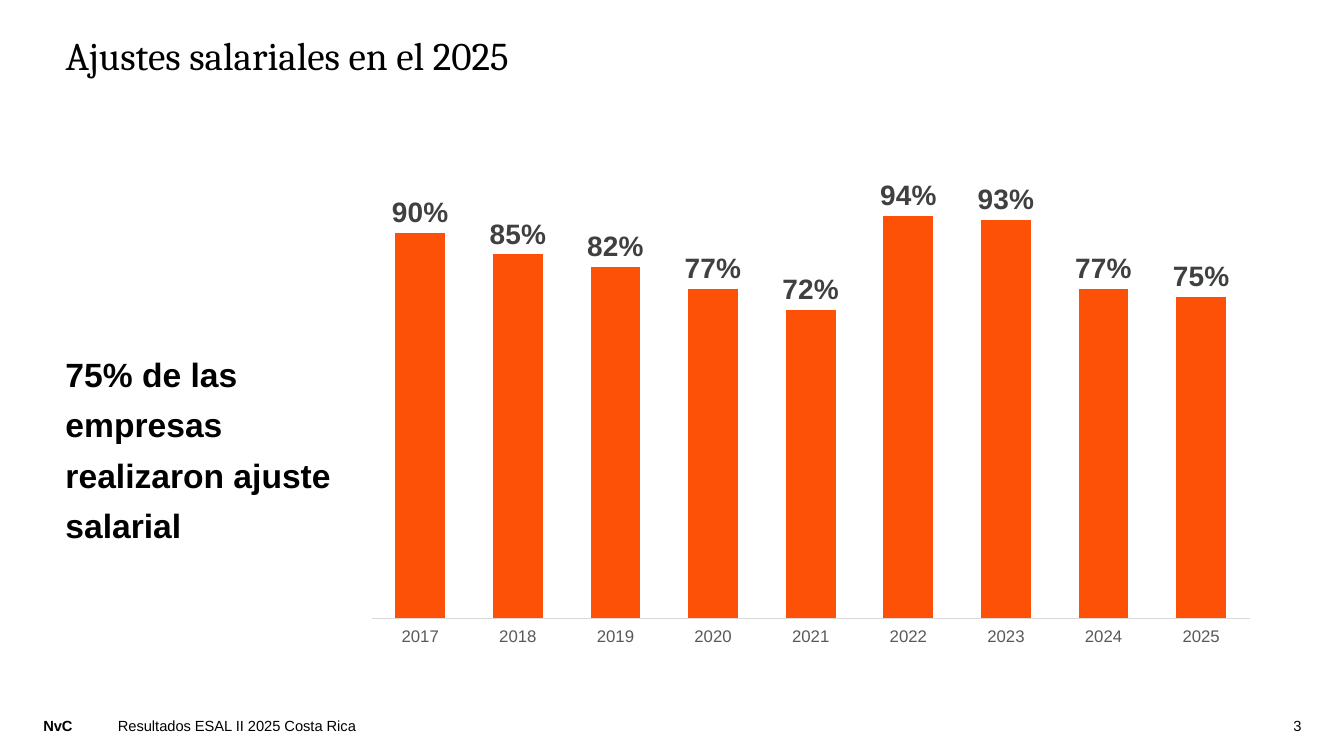
from lxml import etree
from pptx import Presentation
from pptx.chart.data import CategoryChartData
from pptx.dml.color import RGBColor
from pptx.enum.chart import XL_CHART_TYPE as ChartType
from pptx.enum.chart import XL_LABEL_POSITION as LabelPos
from pptx.enum.chart import XL_TICK_LABEL_POSITION as TickLabels
from pptx.enum.chart import XL_TICK_MARK as TickMark
from pptx.enum.text import MSO_ANCHOR as Anchor
from pptx.enum.text import MSO_AUTO_SIZE as AutoSize
from pptx.enum.text import PP_ALIGN as Align
from pptx.oxml.ns import qn
from pptx.util import Inches, Pt

BLACK = RGBColor(0x00, 0x00, 0x00)
ORANGE = RGBColor(0xFD, 0x51, 0x08)
LABEL_GRAY = RGBColor(0x40, 0x40, 0x40)
AXIS_GRAY = RGBColor(0x59, 0x59, 0x59)
LINE_GRAY = RGBColor(0xD9, 0xD9, 0xD9)

ADJUSTMENTS = {
    "2017": 0.90, "2018": 0.85, "2019": 0.82, "2020": 0.77, "2021": 0.72,
    "2022": 0.94, "2023": 0.93, "2024": 0.77, "2025": 0.75,
}


def set_font(font, size, color=BLACK, name="Arial", bold=False):
    font.color.rgb = color
    values = {"size": Pt(size), "name": name, "bold": bold}
    for attr, value in values.items():
        setattr(font, attr, value)


def fill_text(shape, text, size, anchor=Anchor.TOP, paragraph=None, **font):
    tf = shape.text_frame
    frame = {
        "margin_left": 0, "margin_right": 0, "margin_top": 0, "margin_bottom": 0,
        "word_wrap": True, "auto_size": AutoSize.NONE, "vertical_anchor": anchor,
    }
    for attr, value in frame.items():
        setattr(tf, attr, value)
    p = tf.paragraphs[0]
    for attr, value in {"alignment": Align.LEFT, **(paragraph or {})}.items():
        setattr(p, attr, value)
    r = p.add_run()
    r.text = text
    set_font(r.font, size, **font)


def add_title(s, text):
    title = s.shapes.title
    place = {"left": 0.65, "top": 0.36, "width": 12.47, "height": 1}
    for attr, value in place.items():
        setattr(title, attr, Inches(value))
    fill_text(title, text, 28, name="Cambria", paragraph={"line_spacing": 0.9})


def add_text(s, box, text, size, **options):
    sp = s.shapes.add_textbox(*map(Inches, box))
    fill_text(sp, text, size, **options)


def set_plot_area(chart, **area):
    plot_area = chart._chartSpace.find(".//" + qn("c:plotArea"))
    for old in plot_area.findall(qn("c:layout")):
        plot_area.remove(old)
    layout = etree.Element(qn("c:layout"))
    manual = etree.SubElement(layout, qn("c:manualLayout"))
    settings = {"layoutTarget": "inner", "xMode": "edge", "yMode": "edge", **area}
    for tag, value in settings.items():
        etree.SubElement(manual, qn("c:" + tag)).set("val", str(value))
    plot_area.insert(0, layout)


def add_column_chart(s, box, values):
    data = CategoryChartData(number_format="0%")
    data.categories = list(values)
    data.add_series("Series 1", list(values.values()))
    chart = s.shapes.add_chart(
        ChartType.COLUMN_CLUSTERED, *map(Inches, box), data).chart
    chart.has_legend = False
    chart.has_title = False
    set_font(chart.font, 10)
    set_plot_area(chart, x=0.016, y=0.027, w=0.965, h=0.843)

    # Axes
    years = chart.category_axis
    years.major_tick_mark = TickMark.NONE
    years.tick_label_position = TickLabels.LOW
    set_font(years.tick_labels.font, 12, AXIS_GRAY)
    years.format.line.color.rgb = LINE_GRAY
    years.format.line.width = Pt(0.75)
    scale = {"minimum_scale": 0, "maximum_scale": 1,
             "has_major_gridlines": False, "visible": False}
    for attr, value in scale.items():
        setattr(chart.value_axis, attr, value)

    # Columns and their labels
    plot = chart.plots[0]
    plot.gap_width = 96
    plot.vary_by_categories = False
    fill = plot.series[0].format.fill
    fill.solid()
    fill.fore_color.rgb = ORANGE
    labels = plot.series[0].data_labels
    label_format = {"show_value": True, "position": LabelPos.OUTSIDE_END,
                    "number_format": "0%", "number_format_is_linked": False}
    for attr, value in label_format.items():
        setattr(labels, attr, value)
    set_font(labels.font, 20, LABEL_GRAY, bold=True)


def main():
    prs = Presentation()
    prs.slide_width, prs.slide_height = Inches(13.33), Inches(7.5)
    s = prs.slides.add_slide(prs.slide_layouts[5])

    # Title, message and chart
    add_title(s, "Ajustes salariales en el 2025")
    add_text(s, (0.65, 3.41, 2.9, 1.97),
             "75% de las empresas realizaron ajuste salarial", 24, bold=True,
             paragraph={"line_spacing": 1.25, "space_after": Pt(10)})
    add_column_chart(s, (3.54, 1.75, 9.03, 5.04), ADJUSTMENTS)

    # Footer
    add_text(s, (0.43, 7.11, 0.47, 0.18), "NvC", 10.5, bold=True)
    add_text(s, (1.17, 7.11, 9.64, 0.18), "Resultados ESAL II 2025 Costa Rica",
             10.5, anchor=Anchor.BOTTOM)
    add_text(s, (12.58, 7.11, 0.33, 0.18), "3", 10.5, anchor=Anchor.BOTTOM,
             paragraph={"alignment": Align.RIGHT})

    prs.save("out.pptx")


if __name__ == "__main__":
    main()
